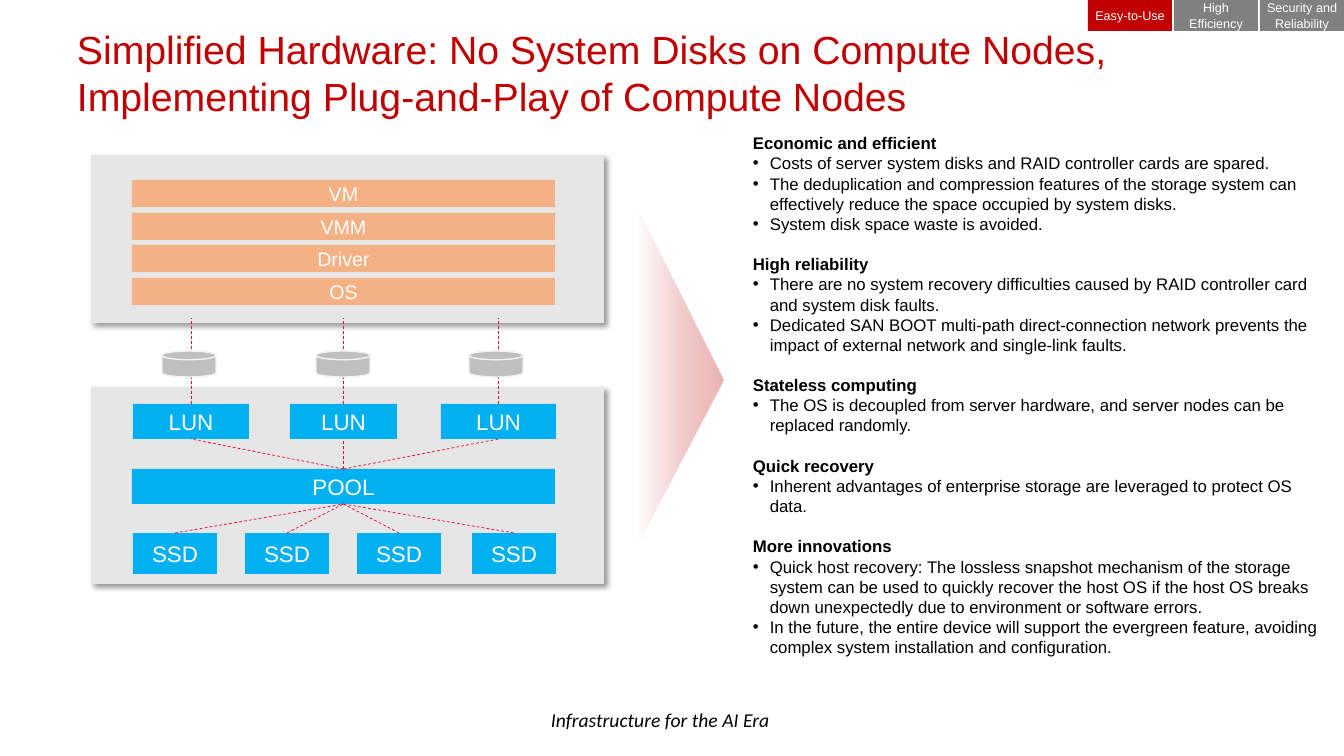
import pptx
import pptx.dml.color
import pptx.enum.dml
import pptx.enum.shapes
import pptx.enum.text
import pptx.oxml
import pptx.oxml.ns
import pptx.util

SHAPES = pptx.enum.shapes.MSO_SHAPE
CENTER = pptx.enum.text.PP_ALIGN.CENTER
MIDDLE = pptx.enum.text.MSO_ANCHOR.MIDDLE
EMU_PER_PX = 914400 / 100.8
LINE_HEIGHT = 1.2
TOP, BOTTOM = 0, 2

RED, GREY, WHITE, BLACK = "C00000", "808080", "FFFFFF", "000000"
BLUE, ORANGE, PANEL, LINK = "00B0F0", "F4B183", "E7E6E6", "E9002F"
DISK, DISK_EDGE = "BFBFBF", "F2F2F2"

TITLE = ("Simplified Hardware: No System Disks on Compute Nodes, "
         "Implementing Plug-and-Play of Compute Nodes")
FOOTER = "Infrastructure for the AI Era"
TABS = [("Easy-to-Use", RED), ("High Efficiency", GREY), ("Security and Reliability", GREY)]
PANELS = [(91, 155, 513, 168), (91, 387, 513, 197)]
SOFTWARE_LAYERS = ["VM", "VMM", "Driver", "OS"]
LUNS = [(133, 116), (290, 107), (441, 115)]  # left, width
SSD_LEFTS = [133, 245, 357, 472]
DISK_LEFTS = [162, 316, 469]
POOL_BOX = (132, 469, 423, 35)
BENEFITS = [
    ("Economic and efficient", [
        "Costs of server system disks and RAID controller cards are spared.",
        "The deduplication and compression features of the storage system can "
        "effectively reduce the space occupied by system disks.",
        "System disk space waste is avoided."]),
    ("High reliability", [
        "There are no system recovery difficulties caused by RAID controller card "
        "and system disk faults.",
        "Dedicated SAN BOOT multi-path direct-connection network prevents the "
        "impact of external network and single-link faults."]),
    ("Stateless computing", [
        "The OS is decoupled from server hardware, and server nodes can be "
        "replaced randomly."]),
    ("Quick recovery", [
        "Inherent advantages of enterprise storage are leveraged to protect OS data."]),
    ("More innovations", [
        "Quick host recovery: The lossless snapshot mechanism of the storage system "
        "can be used to quickly recover the host OS if the host OS breaks down "
        "unexpectedly due to environment or software errors.",
        "In the future, the entire device will support the evergreen feature, "
        "avoiding complex system installation and configuration."]),
]


def px(length):
    return pptx.util.Emu(round(length * EMU_PER_PX))


def color(value):
    return pptx.dml.color.RGBColor.from_string(value)


def xml(tag, body):
    """Parse one DrawingML element, given its opening tag and its content."""
    name = tag.split()[0]
    namespace = pptx.oxml.ns.nsdecls("a")
    return pptx.oxml.parse_xml(f"<a:{tag} {namespace}>{body}</a:{name}>")


def style(paragraph, size, font_color, name="Arial", bold=False, italic=False):
    for run in paragraph.runs:
        font = run.font
        font.size, font.name = pptx.util.Pt(size), name
        font.bold, font.italic = bold, italic
        font.color.rgb = color(font_color)


def set_insets(text_frame, horizontal, vertical):
    text_frame.margin_left = text_frame.margin_right = px(horizontal)
    text_frame.margin_top = text_frame.margin_bottom = px(vertical)


def add_block(slide, box, fill, preset=SHAPES.RECTANGLE):
    shape = slide.shapes.add_shape(preset, *map(px, box))
    shape.shadow.inherit = False
    shape.fill.solid()
    shape.fill.fore_color.rgb = color(fill)
    shape.line.fill.background()
    return shape


def add_label(slide, box, fill, text, size, insets=(10, 5)):
    shape = add_block(slide, box, fill)
    text_frame = shape.text_frame
    text_frame.word_wrap = True
    text_frame.vertical_anchor = MIDDLE
    set_insets(text_frame, *insets)
    text_frame.text = text
    text_frame.paragraphs[0].alignment = CENTER
    style(text_frame.paragraphs[0], size, WHITE)
    return shape


def add_link(slide, start, start_side, end=None, end_side=TOP, rise_to=318):
    """Dashed line from a block side to another block, or straight up to a height."""
    x, y = start.left + start.width // 2, start.top
    connector = slide.shapes.add_connector(
        pptx.enum.shapes.MSO_CONNECTOR.STRAIGHT, x, y, x, px(rise_to))
    connector.begin_connect(start, start_side)
    if end is not None:
        connector.end_connect(end, end_side)
    connector.line.color.rgb = color(LINK)
    connector.line.width = pptx.util.Pt(0.5)
    connector.line.dash_style = pptx.enum.dml.MSO_LINE.DASH
    connector._element.spPr.append(xml("effectLst", ""))


def add_text_box(slide, box):
    text_frame = slide.shapes.add_textbox(*map(px, box)).text_frame
    text_frame.word_wrap = True
    return text_frame


def add_panels(slide):
    for box in PANELS:
        panel = add_block(slide, box, PANEL)
        effects = panel._element.spPr.find(pptx.oxml.ns.qn("a:effectLst"))
        effects.append(xml(
            'outerShdw blurRad="50800" dist="38100" dir="2700000" algn="tl" rotWithShape="0"',
            f'<a:srgbClr val="{BLACK}"><a:alpha val="40000"/></a:srgbClr>'))


def add_architecture(slide):
    add_panels(slide)
    ssds = [add_label(slide, (left, 533, 84, 41), BLUE, "SSD", 16) for left in SSD_LEFTS]
    pool = add_label(slide, POOL_BOX, BLUE, "POOL", 16)
    luns = [add_label(slide, (left, 404, width, 35), BLUE, "LUN", 16) for left, width in LUNS]
    for ssd in ssds:
        add_link(slide, ssd, TOP, pool, BOTTOM)
    for lun in luns:
        add_link(slide, pool, TOP, lun, BOTTOM)
        add_link(slide, lun, TOP)
    for index, layer in enumerate(SOFTWARE_LAYERS):
        top = 180 + round(index * 98 / 3)
        add_label(slide, (132, top, 423, 27), ORANGE, layer, 14)
    for left in DISK_LEFTS:
        disk = add_block(slide, (left, 351, 54, 26), DISK, SHAPES.FLOWCHART_MAGNETIC_DISK)
        disk.line.color.rgb = color(DISK_EDGE)
        disk.line.width = pptx.util.Pt(1)


def add_fading_arrow(slide):
    arrow = add_block(slide, (477, 327, 393, 99), RED, SHAPES.ISOSCELES_TRIANGLE)
    arrow.rotation = 90
    arrow.adjustments[0] = 0.51
    stops = "".join(
        f'<a:gs pos="{position}000"><a:srgbClr val="{RED}">'
        f'<a:alpha val="{opacity}000"/></a:srgbClr></a:gs>'
        for position, opacity in [(0, 30), (42, 20), (87, 0), (100, 0)])
    gradient = xml('gradFill rotWithShape="1"',
                   f'<a:gsLst>{stops}</a:gsLst><a:lin ang="5400000" scaled="0"/>')
    properties = arrow._element.spPr
    properties.replace(properties.find(pptx.oxml.ns.qn("a:solidFill")), gradient)


def add_benefits(slide):
    text_frame = add_text_box(slide, (743, 128, 586, 473))
    lines = [(text, is_heading) for heading, points in BENEFITS
             for text, is_heading in [(heading, True)] + [(point, False) for point in points]]
    line_height = pptx.util.Pt(12 * LINE_HEIGHT)
    for index, (text, is_heading) in enumerate(lines):
        paragraph = text_frame.add_paragraph() if index else text_frame.paragraphs[0]
        paragraph.text = text
        paragraph.line_spacing = line_height
        if is_heading and index:
            paragraph.space_before = line_height
        if not is_heading:
            properties = paragraph._p.get_or_add_pPr()
            properties.set("marL", str(px(17)))
            properties.set("indent", str(-px(17)))
            properties.append(xml('buFont typeface="Arial"', ""))
            properties.append(xml('buChar char="•"', ""))
        style(paragraph, 12, BLACK, bold=is_heading)


def add_title(slide):
    text_frame = add_text_box(slide, (64, 18, 1200, 81))
    set_insets(text_frame, 13, 7)
    text_frame.text = TITLE
    text_frame.paragraphs[0].line_spacing = pptx.util.Pt(28 * LINE_HEIGHT)
    style(text_frame.paragraphs[0], 28, RED)


def add_footer(slide):
    text_frame = add_text_box(slide, (541, 703, 241, 34))
    text_frame.word_wrap = False
    text_frame.text = FOOTER
    style(text_frame.paragraphs[0], 14, BLACK, name="Calibri", italic=True)


def main():
    presentation = pptx.Presentation()
    presentation.slide_width, presentation.slide_height = px(1344), px(756)
    slide = presentation.slides.add_slide(presentation.slide_layouts[6])
    add_footer(slide)
    add_architecture(slide)
    add_benefits(slide)
    add_title(slide)
    add_fading_arrow(slide)
    for index, (text, fill) in enumerate(TABS):
        add_label(slide, (1088 + 86 * index, 0, 84, 31), fill, text, 9, insets=(2, 2))
    presentation.save("out.pptx")


if __name__ == "__main__":
    main()
